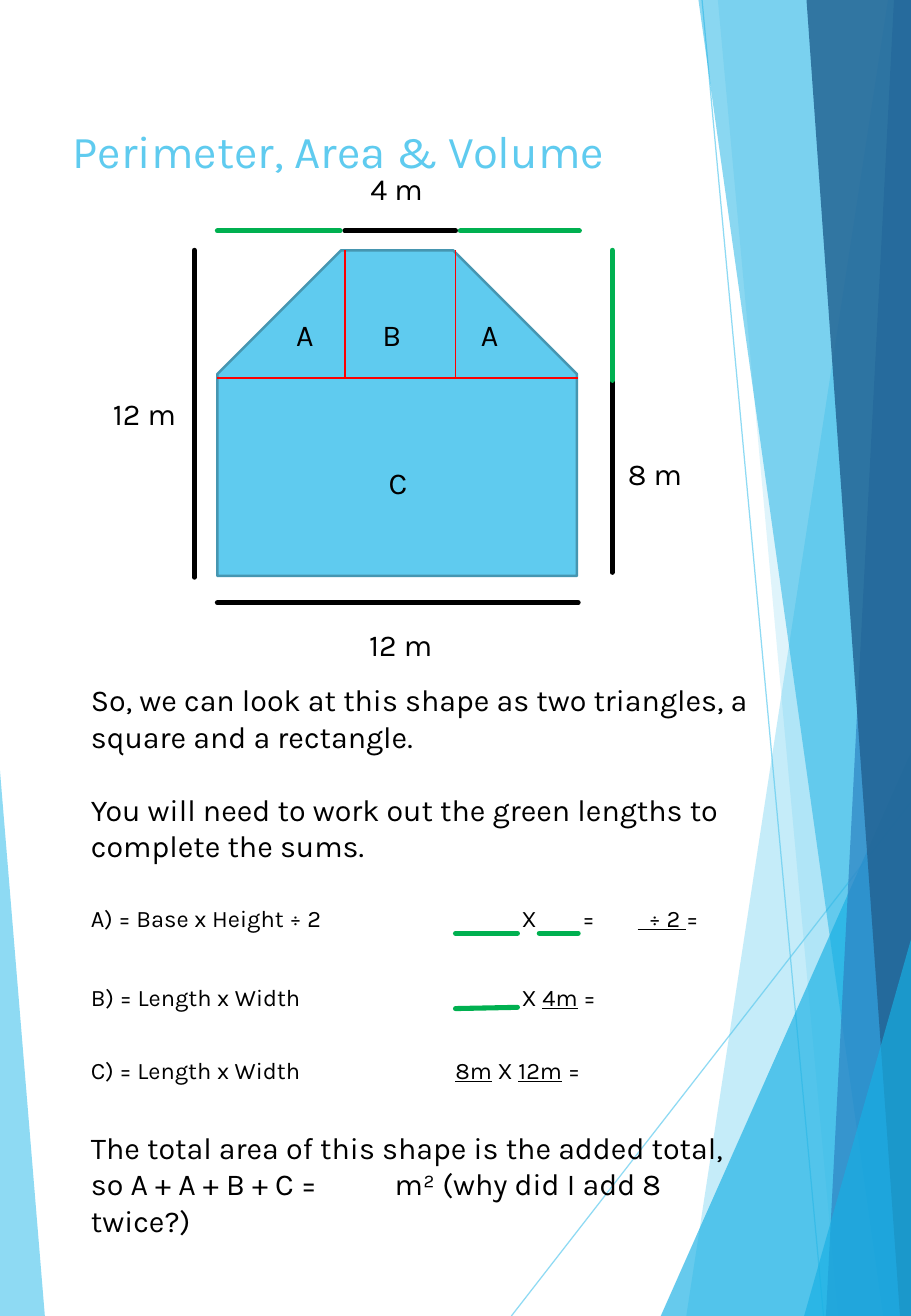
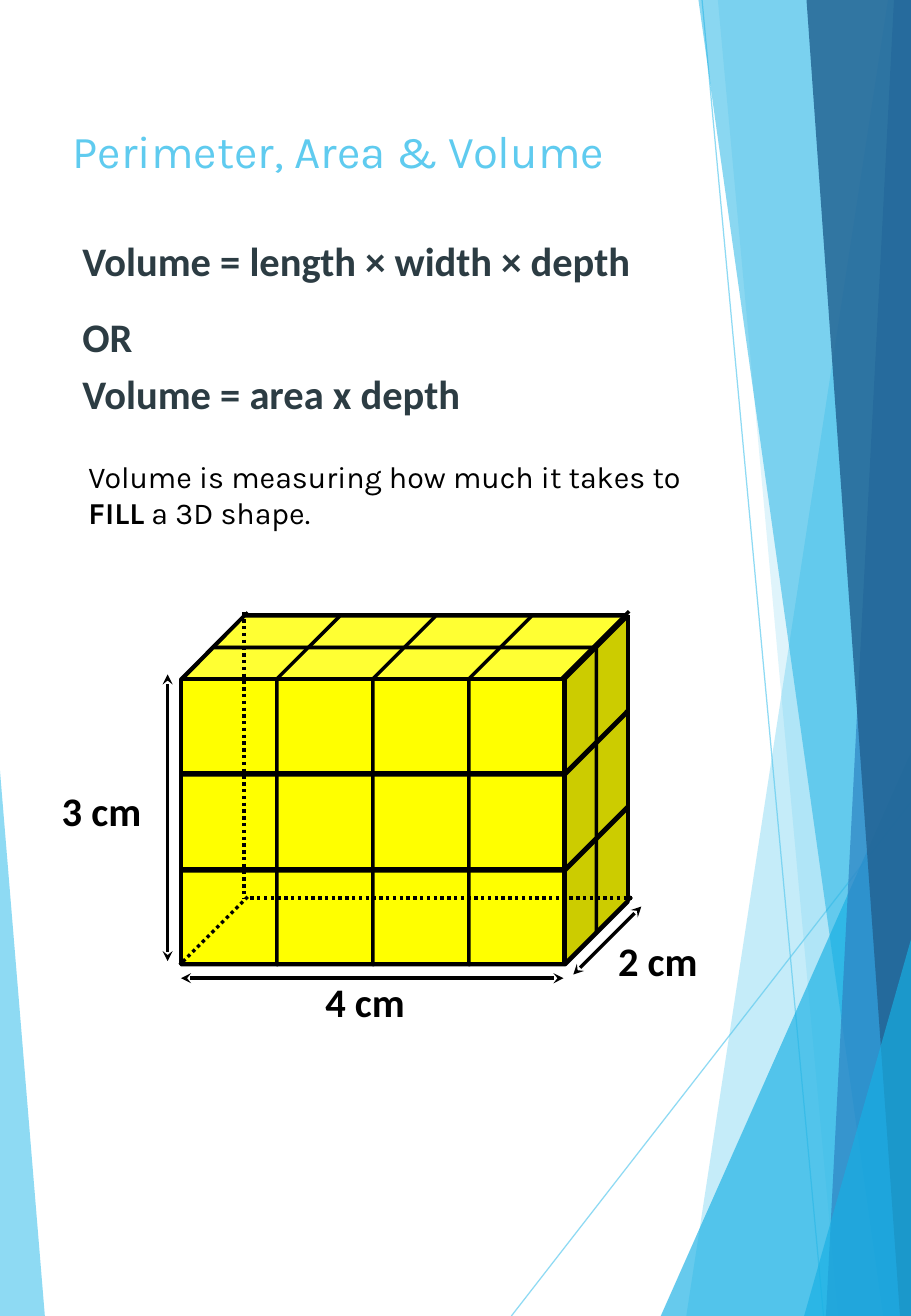
from dataclasses import dataclass
from typing import NamedTuple

from lxml.etree import SubElement
from pptx import Presentation
from pptx.dml.color import RGBColor
from pptx.enum.dml import MSO_LINE
from pptx.enum.shapes import MSO_CONNECTOR, MSO_SHAPE
from pptx.oxml.ns import qn
from pptx.util import Inches, Pt

WIDTH, HEIGHT = 7.5, 10.83


@dataclass(frozen=True)
class Theme:
    sky: str = "5FCBEF"
    azure: str = "17B0E4"
    blue: str = "2E83C3"
    navy: str = "226292"
    outline: str = "4696B1"
    black: str = "000000"
    slate: str = "2C3C43"
    red: str = "FF0000"
    green: str = "00B050"
    yellow: str = "FFFF00"
    body_font: str = "Karla"
    formula_font: str = "Calibri"
    title_size: float = 27
    formula_size: float = 24
    body_size: float = 18
    sum_size: float = 14


THEME = Theme()


class Span(NamedTuple):
    text: str
    bold: bool = False
    underline: bool = False


class Band(NamedTuple):
    color: str
    opacity: int
    points: tuple


class Line(NamedTuple):
    start: tuple
    end: tuple
    color: str = THEME.black
    width: float = 2
    dash: MSO_LINE | None = None
    opacity: int = 100
    arrows: bool = False
    rounded: bool = False


class Label(NamedTuple):
    text: str
    left: float
    top: float


EDGE_LINES = [
    Line((4.21, HEIGHT), (WIDTH, 6.6), THEME.sky, 0.75, opacity=70),
    Line((5.78, 0), (6.78, HEIGHT), THEME.sky, 0.75, opacity=70),
]
LEFT_BAND = Band(THEME.sky, 70, ((0, 6.34), (0.37, HEIGHT), (0, HEIGHT)))


def right_band(color: str, opacity: int, top_x: float, bottom_x: float) -> Band:
    """Full-height band between a slanted edge and the right side."""
    return Band(color, opacity, ((top_x, 0), (bottom_x, HEIGHT), (WIDTH, HEIGHT), (WIDTH, 0)))


def corner_band(left: float, top: float) -> Band:
    return Band(THEME.azure, 66, ((left, HEIGHT), (WIDTH, top), (WIDTH, HEIGHT)))


RIGHT_BANDS = [
    right_band(THEME.sky, 36, 7.31, 5.65),
    right_band(THEME.sky, 20, 5.91, 6.9),
    corner_band(5.44, 6.19),
    right_band(THEME.azure, 50, 5.75, 7.27),
    right_band(THEME.blue, 70, 7.36, 6.8),
    right_band(THEME.navy, 82, 6.64, 7.41),
    corner_band(6.62, 7.73),
]


def set_opacity(fill_parent, percent: int) -> None:
    color = fill_parent.find(qn("a:solidFill"))[0]
    SubElement(color, qn("a:alpha"), val=str(percent * 1000))


def add_band(page, band: Band) -> None:
    points = [(Inches(x), Inches(y)) for x, y in band.points]
    builder = page.shapes.build_freeform(*points[0], scale=1.0)
    builder.add_line_segments(points[1:], close=True)
    shape = builder.convert_to_shape()
    shape.shadow.inherit = False
    shape.fill.solid()
    shape.fill.fore_color.rgb = RGBColor.from_string(band.color)
    shape.line.fill.background()
    set_opacity(shape._element.spPr, band.opacity)


def add_line(page, line: Line) -> None:
    connector = page.shapes.add_connector(
        MSO_CONNECTOR.STRAIGHT, *(Inches(value) for value in (*line.start, *line.end)))
    connector.line.color.rgb = RGBColor.from_string(line.color)
    connector.line.width = Pt(line.width)
    if line.dash:
        connector.line.dash_style = line.dash
    properties = connector._element.spPr
    stroke = properties.find(qn("a:ln"))
    if line.opacity < 100:
        set_opacity(stroke, line.opacity)
    if line.rounded:
        stroke.set("cap", "rnd")
    if line.arrows:
        for tag in ("a:headEnd", "a:tailEnd"):
            SubElement(stroke, qn(tag), type="stealth")
    SubElement(properties, qn("a:effectLst"))


def add_preset(page, kind: MSO_SHAPE, left: float, top: float, width: float, height: float, *,
               fill: str | None = None, line: str = THEME.black, line_width: float = 2,
               adjustments: tuple = ()) -> None:
    shape = page.shapes.add_shape(kind, Inches(left), Inches(top), Inches(width), Inches(height))
    shape.shadow.inherit = False
    if fill:
        shape.fill.solid()
        shape.fill.fore_color.rgb = RGBColor.from_string(fill)
    else:
        shape.fill.background()
    shape.line.color.rgb = RGBColor.from_string(line)
    shape.line.width = Pt(line_width)
    for index, value in enumerate(adjustments):
        shape.adjustments[index] = value


def add_text(page, paragraphs: list, left: float, top: float, width: float, height: float, *,
             size: float = THEME.body_size, font: str = THEME.body_font,
             color: str = THEME.black, bold: bool = False,
             first_gap: float = 0, gap: float = 0) -> None:
    """Each paragraph is a string or a list of spans; gaps are points before it."""
    box = page.shapes.add_textbox(Inches(left), Inches(top), Inches(width), Inches(height))
    frame = box.text_frame
    frame.word_wrap = True
    for index, content in enumerate(paragraphs):
        para = frame.add_paragraph() if index else frame.paragraphs[0]
        para.space_before = Pt(gap if index else first_gap)
        para._p.get_or_add_pPr().set("defTabSz", str(Inches(0.5)))
        for span in [Span(content)] if isinstance(content, str) else content:
            run = para.add_run()
            run.text = span.text
            run.font.name = font
            run.font.size = Pt(size)
            run.font.bold = bold or span.bold
            run.font.underline = span.underline
            run.font.color.rgb = RGBColor.from_string(color)


def add_formula(page, paragraphs: list, left: float, top: float, width: float = 7.2,
                color: str = THEME.slate) -> None:
    add_text(page, paragraphs, left, top, width, 0.64, size=THEME.formula_size,
             font=THEME.formula_font, color=color, bold=True, first_gap=4.8, gap=4.8)


def add_page(deck):
    """Blank page with the shared bands and title."""
    page = deck.slides.add_slide(deck.slide_layouts[6])
    add_band(page, LEFT_BAND)
    for line in EDGE_LINES:
        add_line(page, line)
    for band in RIGHT_BANDS:
        add_band(page, band)
    add_text(page, ["Perimeter, Area & Volume"], 0.5, 0.96, 5.21, 2.09,
             size=THEME.title_size, color=THEME.sky)
    return page


def add_area_page(deck) -> None:
    page = add_page(deck)
    left, right, roof, eaves = 1.79, 4.76, 2.06, 3.11
    inner_left, inner_right = 2.84, 3.75
    add_preset(page, MSO_SHAPE.SNIP_2_SAME_RECTANGLE, left, roof, 2.96, 2.68, fill=THEME.sky,
               line=THEME.outline, line_width=1.5, adjustments=(0.38, 0))

    known_lengths = [
        ((left, 4.96), (right, 4.96)),
        ((1.6, roof), (1.6, 4.75)),
        ((5.04, 3.13), (5.04, 4.71)),
        ((inner_left, 1.9), (inner_right, 1.9)),
    ]
    dividers = [
        ((left, eaves), (right, eaves)),
        ((inner_left, roof), (inner_left, eaves)),
        ((inner_right, roof), (inner_right, eaves)),
    ]
    unknown_lengths = [
        ((5.04, roof), (5.04, 3.13)),
        ((3.79, 1.9), (4.77, 1.9)),
        ((left, 1.9), (2.8, 1.9)),
        ((3.75, 8.3), (4.26, 8.29)),
        ((3.75, 7.68), (4.26, 7.68)),
        ((4.44, 7.68), (4.76, 7.68)),
    ]
    for ends in known_lengths:
        add_line(page, Line(*ends, width=3, rounded=True))
    for ends in dividers:
        add_line(page, Line(*ends, color=THEME.red, width=1))

    labels = [
        Label("4 m", 2.95, 1.35), Label("8 m", 5.07, 3.7),
        Label("12 m", 0.83, 3.2), Label("12 m", 2.94, 5.1),
        Label("A", 2.34, 2.55), Label("B", 3.05, 2.55),
        Label("A", 3.86, 2.55), Label("C", 3.1, 3.77),
    ]
    for label in labels:
        add_text(page, [label.text], label.left, label.top, 0.91, 0.4)

    add_text(page, [
        "So, we can look at this shape as two triangles, a square and a rectangle.",
        "You will need to work out the green lengths to complete the sums.",
    ], 0.65, 5.56, 5.71, 1.62, gap=21.5)

    blank = Span("\t", underline=True)
    times, equals = Span(" X "), Span(" = ")
    sums = [
        (7.39, [Span("A) = Base x Height ÷ 2\t\t\t"), blank, times, blank, equals,
                Span("\t  ÷ 2 ", underline=True), Span("=")]),
        (8.04, [Span("B) = Length x Width\t\t\t"), blank, times,
                Span("4m", underline=True), equals]),
        (8.64, [Span("C) = Length x Width\t\t\t"), Span("8m", underline=True), times,
                Span("12m", underline=True), equals]),
    ]
    for top, spans in sums:
        add_text(page, [spans], 0.65, top, 5.71, 0.34, size=THEME.sum_size)
    add_text(page, [[
        Span("The total area of this shape is the added total, so A + A + B + C = "),
        Span("\t\t", underline=True), Span("m² (why did I add 8 twice?)"),
    ]], 0.65, 9.24, 5.71, 1.01)
    for ends in unknown_lengths:
        add_line(page, Line(*ends, color=THEME.green, width=3, rounded=True))


def add_cuboid(page) -> None:
    """Stack unit cubes from the bottom up, back row first, then outline them."""
    pitch, depth = 0.79, 0.26
    left, bottom_top = 1.49, 6.91
    for level in range(3):
        for row in (1, 0):
            for column in range(4):
                add_preset(page, MSO_SHAPE.CUBE, left + column * pitch + row * depth,
                           bottom_top - level * pitch - row * depth, 1.05, 1.03,
                           fill=THEME.yellow, adjustments=(0.25,))
    add_preset(page, MSO_SHAPE.RECTANGLE, left, 5.59, 3.15, 2.34)
    edges = [
        ((5.17, 5.06), (5.17, 7.41)),
        ((5.18, 5.03), (4.62, 5.59)),
        ((2.04, 5.04), (1.49, 5.6)),
        ((2.02, 5.06), (5.16, 5.06)),
        ((5.2, 7.38), (4.64, 7.94)),
    ]
    hidden_edges = [
        ((2.04, 7.38), (1.48, 7.94)),
        ((2.01, 5.04), (2.01, 7.39)),
        ((2.06, 7.39), (5.2, 7.39)),
    ]
    for ends in edges:
        add_line(page, Line(*ends))
    for ends in hidden_edges:
        add_line(page, Line(*ends, dash=MSO_LINE.ROUND_DOT))


def add_volume_page(deck) -> None:
    page = add_page(deck)
    add_formula(page, ["Volume = length × width × depth"], 0.58, 1.89)
    add_formula(page, ["OR", "Volume = area x depth"], 0.58, 2.52)
    add_text(page, [[Span("Volume is measuring how much it takes to "),
                     Span("FILL", bold=True), Span(" a 3D shape.")]], 0.63, 3.72, 5.38, 0.71)
    add_cuboid(page)
    dimensions = [
        (Label("4 cm", 2.58, 7.99), (1.49, 8.05), (4.64, 8.05)),
        (Label("3 cm", 0.41, 6.42), (1.38, 5.55), (1.38, 7.91)),
        (Label("2 cm", 4.99, 7.65), (5.28, 7.46), (4.72, 8.02)),
    ]
    for label, start, end in dimensions:
        add_line(page, Line(start, end, arrows=True))
        add_formula(page, [label.text], label.left, label.top, 1.2, THEME.black)


def main() -> None:
    deck = Presentation()
    deck.slide_width, deck.slide_height = Inches(WIDTH), Inches(HEIGHT)
    add_area_page(deck)
    add_volume_page(deck)
    deck.save("out.pptx")


if __name__ == "__main__":
    main()
